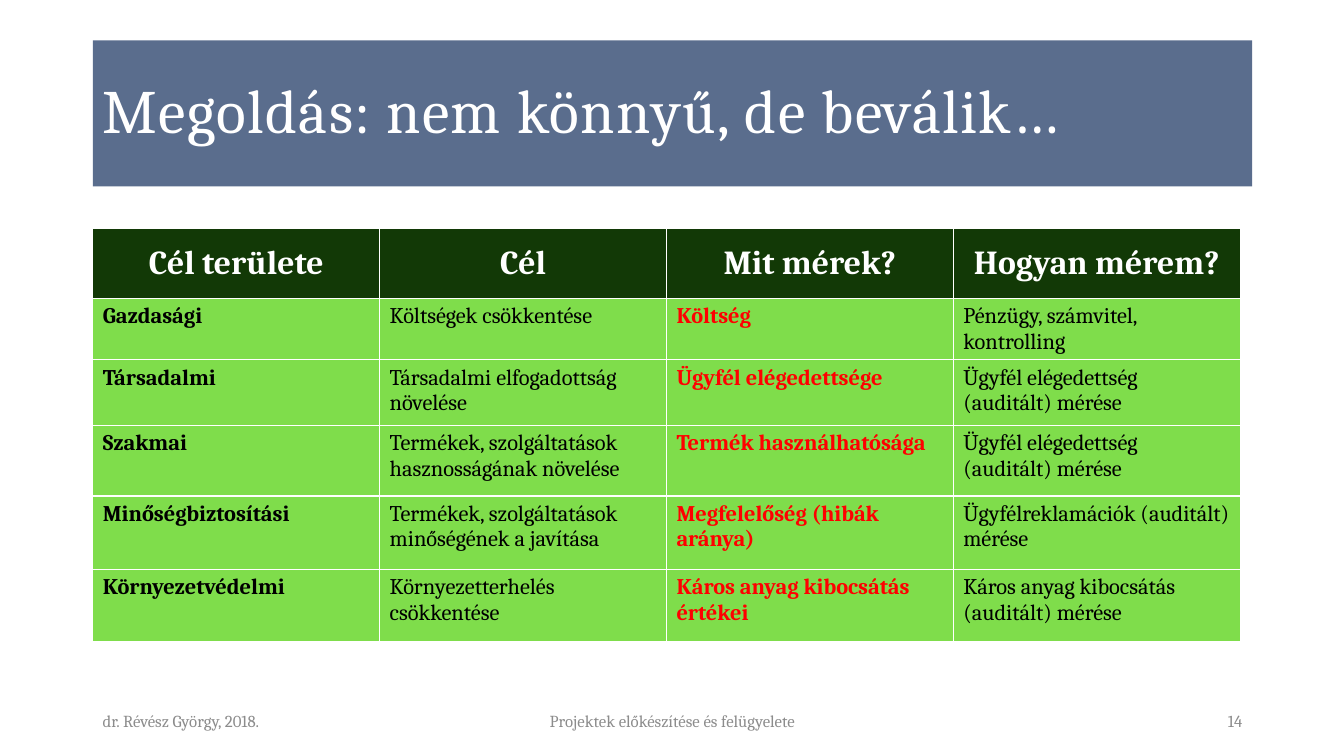
from dataclasses import dataclass

from lxml.etree import SubElement
from pptx import Presentation
from pptx.dml.color import RGBColor as RGB
from pptx.enum.text import MSO_ANCHOR as Anchor, MSO_AUTO_SIZE as Fit, PP_ALIGN as Align
from pptx.oxml.ns import qn
from pptx.util import Inches, Pt


@dataclass(frozen=True)
class Theme:
    font: str = "Cambria"
    white: str = "FFFFFF"
    black: str = "000000"
    red: str = "FF0000"
    gray: str = "8C8C8C"
    blue: str = "5A6D8D"
    dark: str = "123906"
    green: str = "7FDD4B"
    title: int = 44
    head: int = 24
    body: int = 16
    foot: int = 12


THEME = Theme()

HEADS = ["Cél területe", "Cél", "Mit mérek?", "Hogyan mérem?"]
GOALS = [
    ["Gazdasági", "Költségek csökkentése", "Költség",
     "Pénzügy, számvitel, kontrolling"],
    ["Társadalmi", "Társadalmi elfogadottság növelése", "Ügyfél elégedettsége",
     "Ügyfél elégedettség (auditált) mérése"],
    ["Szakmai", "Termékek, szolgáltatások hasznosságának növelése",
     "Termék használhatósága", "Ügyfél elégedettség (auditált) mérése"],
    ["Minőségbiztosítási", "Termékek, szolgáltatások minőségének a javítása",
     "Megfelelőség (hibák aránya)", "Ügyfélreklamációk (auditált) mérése"],
    ["Környezetvédelmi", "Környezetterhelés csökkentése",
     "Káros anyag kibocsátás értékei", "Káros anyag kibocsátás (auditált) mérése"],
]
HEIGHTS = [0.69, 0.48, 0.65, 0.7, 0.73, 0.71]
FOOTERS = [
    (0.92, 3, "dr. Révész György, 2018.", Align.LEFT),
    (4.42, 4.5, "Projektek előkészítése és felügyelete", Align.CENTER),
    (9.42, 3, "14", Align.RIGHT),
]


def write(frame, text, size, color, bold=False, align=Align.LEFT, lines=None, gap=None):
    """Fill a text frame with one formatted run; gap is letter spacing in points."""
    para = frame.paragraphs[0]
    para.alignment = align
    if lines:
        para.line_spacing = lines
    run = para.add_run()
    run.text = text
    font = run.font
    font.name, font.size, font.bold = THEME.font, Pt(size), bold
    font.color.rgb = RGB.from_string(color)
    if gap:
        run._r.get_or_add_rPr().set("spc", str(gap * 100))


def paint(fill, color):
    fill.solid()
    fill.fore_color.rgb = RGB.from_string(color)


def edge(cell, color):
    """Draw a one-point border around a cell, placed before its fill."""
    props = cell._tc.get_or_add_tcPr()
    for i, side in enumerate(("lnL", "lnR", "lnT", "lnB")):
        line = SubElement(props, qn("a:" + side), w=str(Pt(1)))
        solid = SubElement(line, qn("a:solidFill"))
        SubElement(solid, qn("a:srgbClr"), val=color)
        props.insert(i, line)


def add_title(slide, text):
    title = slide.shapes.title
    title.left, title.top = Inches(0.92), Inches(0.4)
    title.width, title.height = Inches(11.5), Inches(1.45)
    paint(title.fill, THEME.blue)
    frame = title.text_frame
    frame.word_wrap = True
    frame.auto_size = Fit.NONE
    frame.vertical_anchor = Anchor.MIDDLE
    write(frame, text, THEME.title, THEME.white, lines=0.9, gap=1)


def add_goals(slide):
    rows = [HEADS] + GOALS
    table = slide.shapes.add_table(
        len(rows), len(HEADS), Inches(0.92), Inches(2.27),
        Inches(11.38), Inches(sum(HEIGHTS))).table
    for row, height in zip(table.rows, HEIGHTS):
        row.height = Inches(height)
    for r, row in enumerate(rows):
        for c, text in enumerate(row):
            cell = table.cell(r, c)
            if r == 0:
                paint(cell.fill, THEME.dark)
                cell.vertical_anchor = Anchor.MIDDLE
                write(cell.text_frame, text, THEME.head, THEME.white,
                      bold=True, align=Align.CENTER)
            else:
                paint(cell.fill, THEME.green)
                color = THEME.red if c == 2 else THEME.black
                write(cell.text_frame, text, THEME.body, color, bold=c in (0, 2))
            edge(cell, THEME.white)


def add_footer(slide, left, width, text, align):
    box = slide.shapes.add_textbox(Inches(left), Inches(6.95), Inches(width), Inches(0.4))
    frame = box.text_frame
    frame.word_wrap = True
    frame.vertical_anchor = Anchor.MIDDLE
    write(frame, text, THEME.foot, THEME.gray, align=align)


def main():
    deck = Presentation()
    deck.slide_width, deck.slide_height = Inches(13.33), Inches(7.5)
    slide = deck.slides.add_slide(deck.slide_layouts[5])
    add_title(slide, "Megoldás: nem könnyű, de beválik…")
    add_goals(slide)
    for footer in FOOTERS:
        add_footer(slide, *footer)
    deck.save("out.pptx")


if __name__ == "__main__":
    main()
